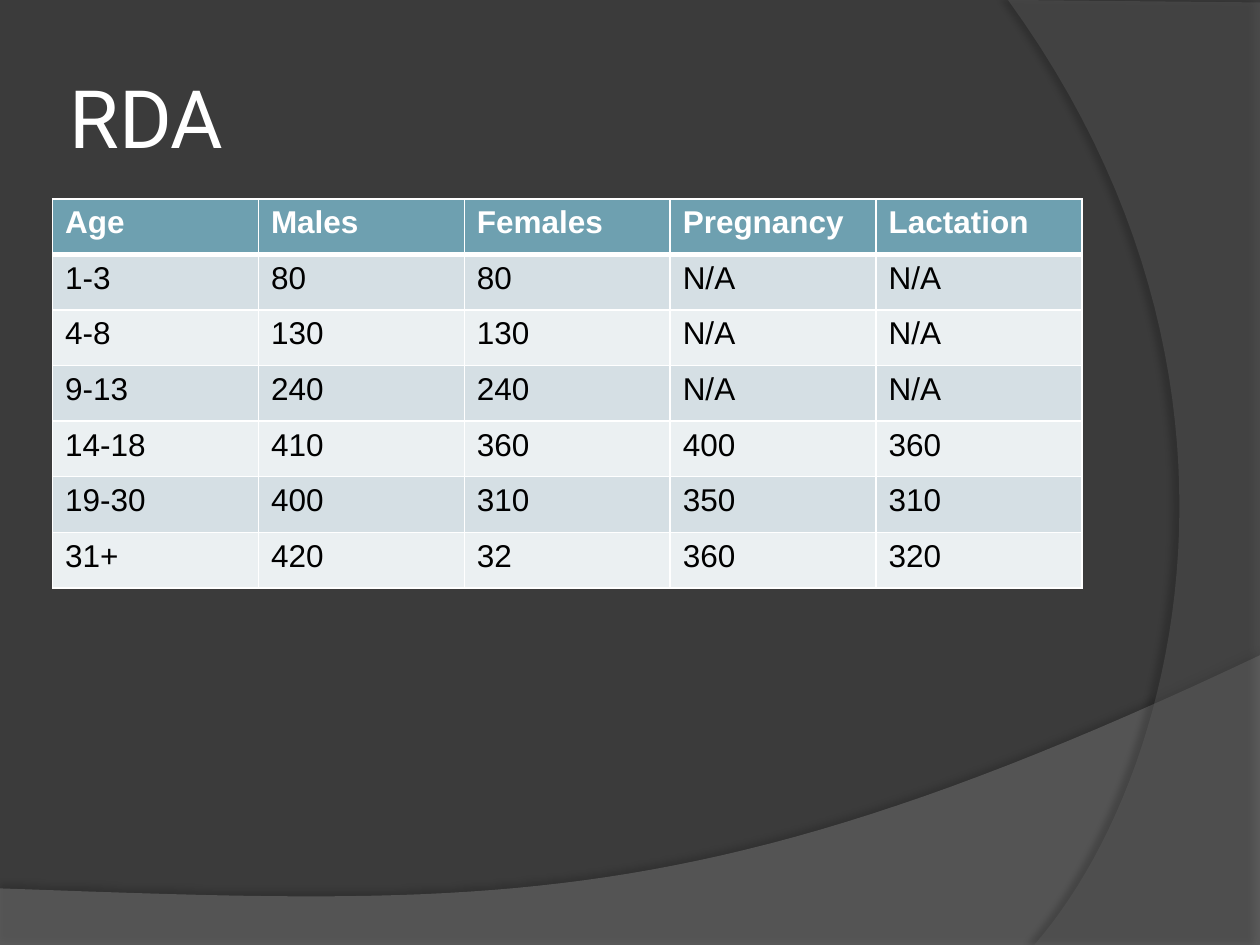
"""Build the RDA slide: a table of daily allowances by age over sweeping curves."""
from lxml import etree
from pptx import Presentation
from pptx import util as u
from pptx.dml.color import RGBColor
from pptx.enum import text
from pptx.oxml import ns

WHITE = RGBColor(0xFF, 0xFF, 0xFF)
BLACK = RGBColor(0, 0, 0)
BACKDROP = RGBColor(0x3B, 0x3B, 0x3B)
LOWER_GREY = RGBColor(0x7F, 0x7F, 0x7F)
RIGHT_GREY = RGBColor(0x5E, 0x5E, 0x5E)
HEADER = RGBColor(0x6E, 0xA0, 0xB0)
BANDS = [RGBColor(0xEB, 0xF0, 0xF2), RGBColor(0xD5, 0xDF, 0xE4)]


def add_xml(parent, tag, **attributes):
    values = {key: str(value) for key, value in attributes.items()}
    return etree.SubElement(parent, ns.qn(tag), values)


def bezier(points, steps=48):
    a, b, c, d = points
    return [
        tuple((1 - t) ** 3 * a[i] + 3 * (1 - t) ** 2 * t * b[i]
              + 3 * (1 - t) * t ** 2 * c[i] + t ** 3 * d[i] for i in (0, 1))
        for t in (step / steps for step in range(steps + 1))
    ]


prs = Presentation()
prs.slide_width, prs.slide_height = u.Cm(25.4), u.Cm(19.05)
slide = prs.slides.add_slide(prs.slide_layouts[5])
slide.background.fill.solid()
slide.background.fill.fore_color.rgb = BACKDROP

title = slide.shapes.title
title.left, title.top, title.width, title.height = (
    u.Cm(1.27), u.Cm(0.76), u.Cm(20.75), u.Cm(3.18))
frame = title.text_frame
frame.text = "RDA"
frame.vertical_anchor = text.MSO_ANCHOR.MIDDLE
frame.auto_size = text.MSO_AUTO_SIZE.NONE
frame.margin_left = frame.margin_right = u.Cm(0.13)
frame.margin_top = frame.margin_bottom = u.Cm(0.13)
heading = frame.paragraphs[0]
heading.alignment = text.PP_ALIGN.LEFT
heading.font.name, heading.font.size = "Roboto", u.Pt(46)
heading.font.color.rgb = WHITE

lower_edge = bezier([(25.4, 13.21), (14.2, 18.52), (9.93, 18.26), (0, 17.91)])
right_edge = bezier([(20.85, 19.05), (23.75, 15.72), (25.86, 7.62), (20.32, 0)])
sweeps = [
    ([(0, 19.08), (25.4, 19.08)] + lower_edge, LOWER_GREY, 45, 35, 3.5, 270),
    ([(25.4, 0.05), (25.4, 19.05)] + right_edge, RIGHT_GREY, 40, 45, 4, 180),
]
for outline, colour, opacity, shadow_opacity, distance, angle in sweeps:
    corners = [(u.Cm(x), u.Cm(y)) for x, y in outline]
    builder = slide.shapes.build_freeform(*corners[0])
    builder.add_line_segments(corners[1:], close=True)
    sweep = builder.convert_to_shape()
    sweep.fill.solid()
    sweep.fill.fore_color.rgb = colour
    sweep.line.fill.background()
    sweep.shadow.inherit = False
    properties = sweep.element.spPr
    add_xml(properties.find(".//" + ns.qn("a:srgbClr")), "a:alpha", val=opacity * 1000)
    shadow = add_xml(properties.find(ns.qn("a:effectLst")), "a:outerShdw",
                     blurRad=u.Pt(4), dist=u.Pt(distance), dir=angle * 60000,
                     algn="ctr", rotWithShape=0)
    shade = add_xml(shadow, "a:srgbClr", val=BLACK)
    add_xml(shade, "a:alpha", val=shadow_opacity * 1000)
    title.element.addprevious(sweep.element)

allowances = [
    ["Age", "Males", "Females", "Pregnancy", "Lactation"],
    ["1-3", "80", "80", "N/A", "N/A"],
    ["4-8", "130", "130", "N/A", "N/A"],
    ["9-13", "240", "240", "N/A", "N/A"],
    ["14-18", "410", "360", "400", "360"],
    ["19-30", "400", "310", "350", "310"],
    ["31+", "420", "32", "360", "320"],
]
table = slide.shapes.add_table(
    len(allowances), len(allowances[0]),
    u.Cm(1.06), u.Cm(4.01), u.Cm(20.75), u.Cm(7.84)).table
for column in table.columns:
    column.width = u.Cm(4.15)
for r, entries in enumerate(allowances):
    table.rows[r].height = u.Cm(1.12)
    for c, entry in enumerate(entries):
        cell = table.cell(r, c)
        cell.text = entry
        font = cell.text_frame.paragraphs[0].font
        font.name, font.size, font.bold = "Arial", u.Pt(18), r == 0
        font.color.rgb = WHITE if r == 0 else BLACK
        cell_properties = cell._tc.get_or_add_tcPr()
        for side in "LRTB":
            under_header = (r, side) in [(0, "B"), (1, "T")]
            border = add_xml(cell_properties, f"a:ln{side}",
                             w=u.Pt(3 if under_header else 1))
            add_xml(add_xml(border, "a:solidFill"), "a:srgbClr", val=WHITE)
        cell.fill.solid()
        cell.fill.fore_color.rgb = HEADER if r == 0 else BANDS[r % 2]

prs.save("out.pptx")
